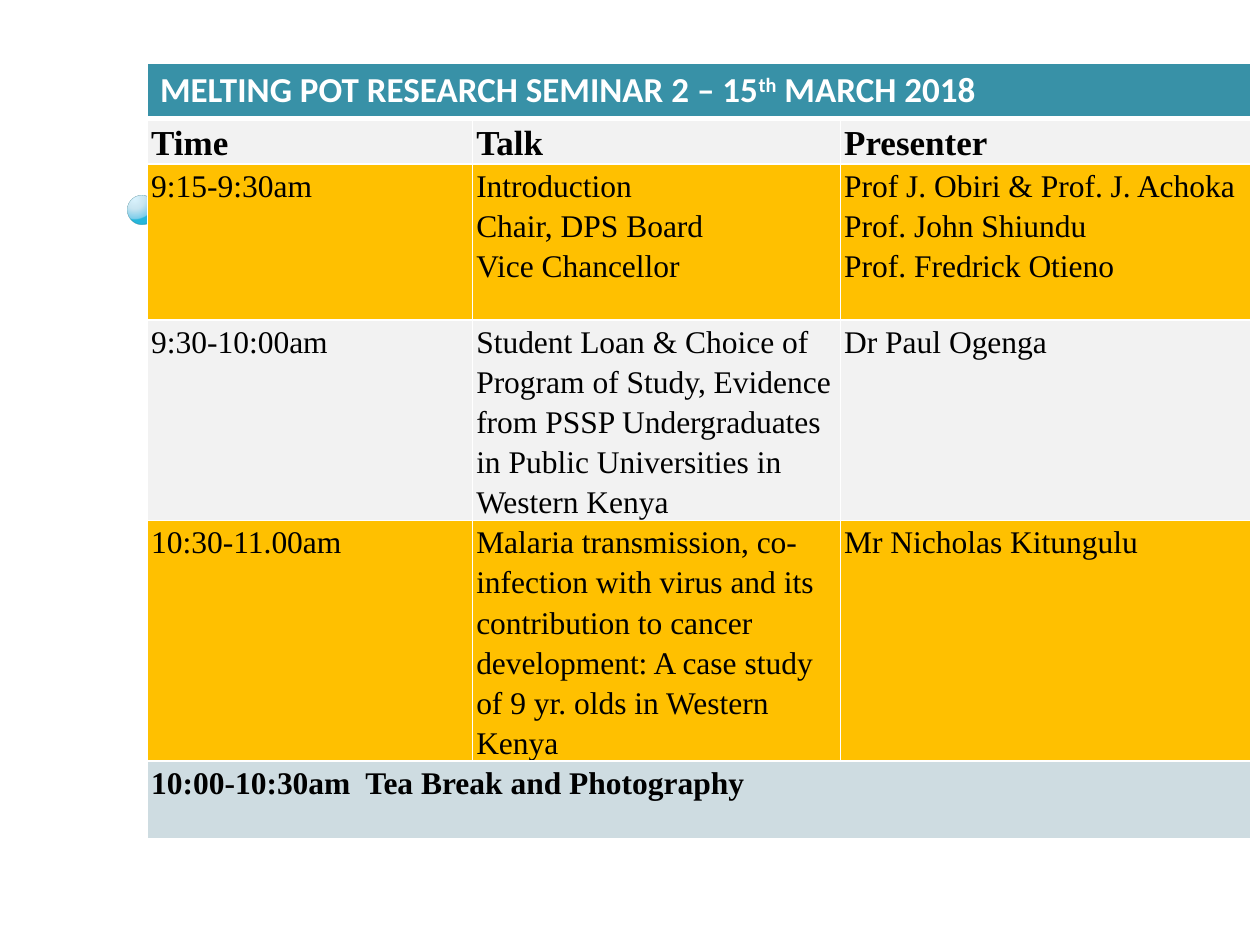
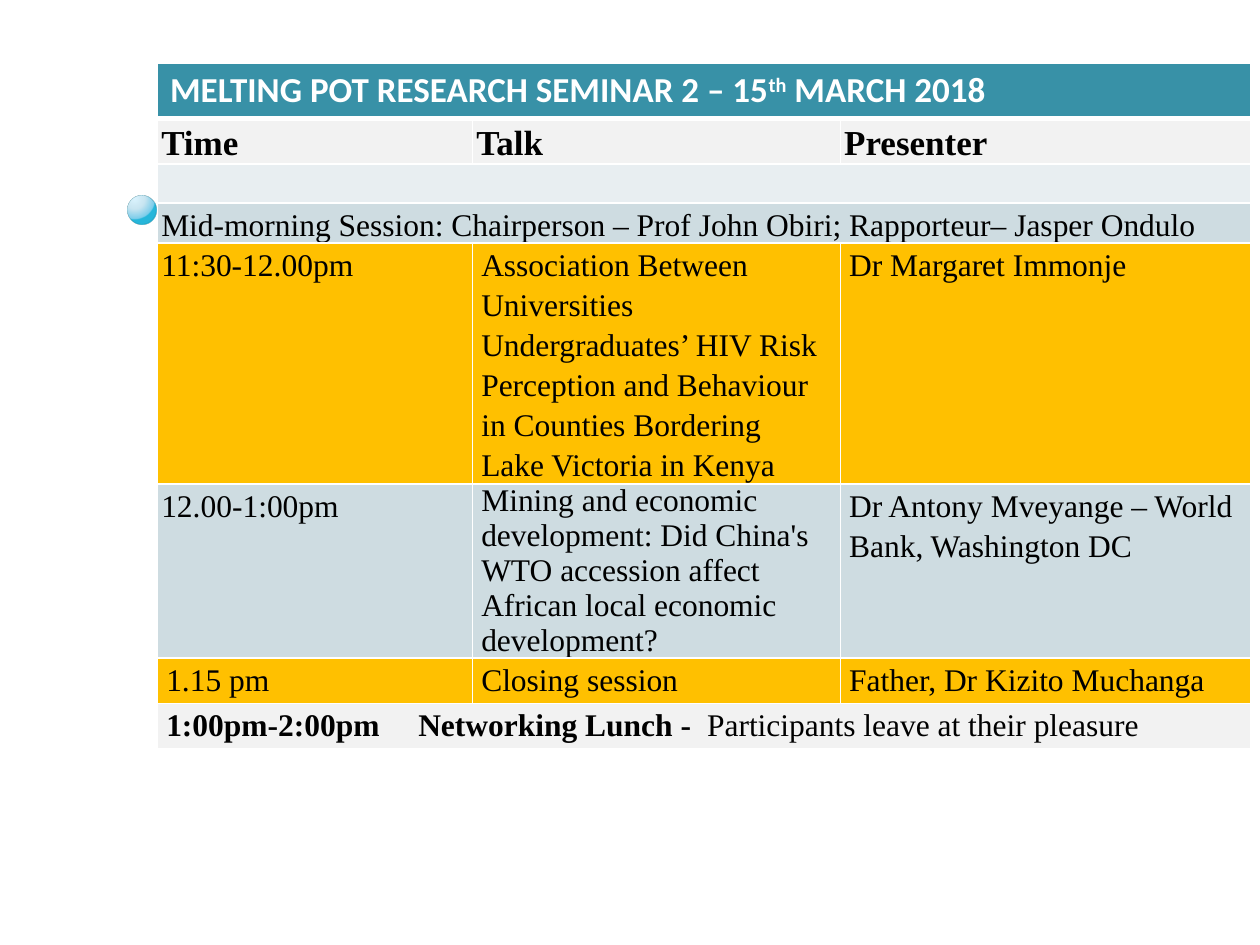
from dataclasses import dataclass

from lxml import etree
from pptx import Presentation
from pptx.dml.color import RGBColor
from pptx.enum.shapes import MSO_SHAPE
from pptx.enum.text import MSO_ANCHOR, PP_ALIGN
from pptx.oxml import parse_xml
from pptx.oxml.ns import nsdecls, qn
from pptx.util import Inches, Pt

OVAL = MSO_SHAPE.OVAL
TOP = MSO_ANCHOR.TOP
LEFT = PP_ALIGN.LEFT


@dataclass(frozen=True)
class Theme:
    teal: str = "3891A7"
    pale: str = "F2F2F2"
    amber: str = "FFC000"
    mist: str = "CEDCE1"
    haze: str = "E8EEF1"
    white: str = "FFFFFF"
    black: str = "000000"
    bead_line: str = "308EA5"
    bead_stops: tuple = ((0, "DAF4FF", 95), (50, "C3E3F0", 90),
                         (95, "6BC7E8", 88), (100, "00ABD5", 85))
    title_font: str = "Calibri"
    body_font: str = "Times New Roman"
    head_size: int = 20
    body_size: int = 18
    spacing: float = 1.15
    tight: float = 0.03
    loose: float = 0.07


THEME = Theme()


@dataclass(frozen=True)
class Box:
    left: float
    top: float
    width: float
    height: float = 0

    def inches(self):
        return [Inches(v) for v in (self.left, self.top, self.width, self.height)]


@dataclass(frozen=True)
class Entry:
    """Text of one cell; a tail is a lighter ending, a tab is a stop in inches."""
    text: str
    inset: float = THEME.tight
    size: int = THEME.body_size
    bold: bool = False
    spacing: float = THEME.spacing
    tail: str = ""
    tab: float = 0


@dataclass(frozen=True)
class Row:
    """One table row; a single entry spans all columns."""
    height: float
    fill: str
    entries: tuple


SLIDE = Box(0, 0, 10, 7.5)
TABLE_TOP, TABLE_RIGHT = 0.5, 9.93
TALK_WIDTH, PRESENTER_WIDTH = 2.92, 3.26
BEAD = Box(1.01, 1.55, 0.23, 0.23)
TITLE_PARTS = (("MELTING POT RESEARCH SEMINAR 2 – 15", False),
               ("th", True), (" MARCH 2018", False))
TITLE_HEIGHT = 0.43
HEADER = Row(0.36, THEME.pale, tuple(
    Entry(name, size=THEME.head_size, bold=True)
    for name in ("Time", "Talk", "Presenter")))

MORNING = (
    Row(1.24, THEME.amber, (
        Entry("9:15-9:30am"),
        Entry("Introduction\nChair, DPS Board\nVice Chancellor"),
        Entry("Prof J. Obiri & Prof. J. Achoka\nProf. John Shiundu\n"
              "Prof. Fredrick Otieno"))),
    Row(1.59, THEME.pale, (
        Entry("9:30-10:00am"),
        Entry("Student Loan & Choice of Program of Study, Evidence from PSSP "
              "Undergraduates in Public Universities in Western Kenya"),
        Entry("Dr Paul Ogenga"))),
    Row(1.91, THEME.amber, (
        Entry("10:30-11.00am"),
        Entry("Malaria transmission, co-infection with virus and its "
              "contribution to cancer development: A case study of 9 yr. olds "
              "in Western Kenya"),
        Entry("Mr Nicholas Kitungulu"))),
    Row(0.62, THEME.mist, (
        Entry("10:00-10:30am\tTea Break and Photography", bold=True, tab=1.7),)),
)

MIDDAY = (
    Row(0.31, THEME.haze, (Entry(""),)),
    Row(0.32, THEME.mist, (
        Entry("Mid-morning Session: Chairperson – Prof John Obiri; "
              "Rapporteur– Jasper Ondulo"),)),
    Row(1.91, THEME.amber, (
        Entry("11:30-12.00pm"),
        Entry("Association Between Universities Undergraduates’ HIV Risk "
              "Perception and Behaviour in Counties Bordering Lake Victoria "
              "in Kenya", THEME.loose),
        Entry("Dr Margaret Immonje", THEME.loose))),
    Row(1.38, THEME.mist, (
        Entry("12.00-1:00pm"),
        Entry("Mining and economic development: Did China's WTO accession "
              "affect African local economic development?", THEME.loose,
              spacing=1.0),
        Entry("Dr Antony Mveyange – World Bank, Washington DC", THEME.loose))),
    Row(0.36, THEME.amber, tuple(
        Entry(text, THEME.loose) for text in
        ("1.15 pm", "Closing session", "Father, Dr Kizito Muchanga"))),
    Row(0.36, THEME.pale, (
        Entry("1:00pm-2:00pm\tNetworking Lunch - ", THEME.loose, bold=True,
              tail=" Participants leave at their pleasure", tab=2.0),)),
)


def style(span, font_name, size, colour, bold):
    font = span.font
    font.name, font.size, font.bold = font_name, Pt(size), bold
    font.color.rgb = RGBColor.from_string(colour)


def add_bead(page, box):
    """Glossy bead at the left margin."""
    bead = page.shapes.add_shape(OVAL, *box.inches())
    bead.shadow.inherit = False
    bead.line.color.rgb = RGBColor.from_string(THEME.bead_line)
    bead.line.width = Pt(0.16)
    stops = "".join(
        f'<a:gs pos="{place * 1000}"><a:srgbClr val="{colour}">'
        f'<a:alpha val="{alpha * 1000}"/></a:srgbClr></a:gs>'
        for place, colour, alpha in THEME.bead_stops)
    gradient = parse_xml(
        f'<a:gradFill {nsdecls("a")}><a:gsLst>{stops}</a:gsLst>'
        '<a:path path="circle"><a:fillToRect l="25000" t="12000" r="75000" '
        'b="88000"/></a:path></a:gradFill>')
    properties = bead._element.spPr
    properties.find(qn("a:prstGeom")).addnext(gradient)
    line_colour = properties.find(qn("a:ln")).find(".//" + qn("a:srgbClr"))
    etree.SubElement(line_colour, qn("a:alpha")).set("val", "60000")


def paint_cell(cell, colour, top=1, bottom=1):
    """White borders, then the fill, in the order the schema asks for."""
    properties = cell._tc.get_or_add_tcPr()
    for side, width in (("L", 1), ("R", 1), ("T", top), ("B", bottom)):
        properties.append(parse_xml(
            f'<a:ln{side} {nsdecls("a")} w="{Pt(width)}"><a:solidFill>'
            f'<a:srgbClr val="{THEME.white}"/></a:solidFill></a:ln{side}>'))
    cell.fill.solid()
    cell.fill.fore_color.rgb = RGBColor.from_string(colour)


def fill_title(cell):
    para = cell.text_frame.paragraphs[0]
    for text, raised in TITLE_PARTS:
        span = para.add_run()
        span.text = text
        style(span, THEME.title_font, THEME.head_size, THEME.white, True)
        if raised:
            span._r.get_or_add_rPr().set("baseline", "30000")


def fill_entry(cell, entry):
    cell.margin_left = cell.margin_right = Inches(entry.inset)
    cell.margin_top = cell.margin_bottom = 0
    cell.vertical_anchor = TOP
    if not entry.text:
        return
    frame = cell.text_frame
    frame.text = entry.text
    for para in frame.paragraphs:
        para.alignment = LEFT
        para.line_spacing = entry.spacing
        if entry.tab:
            stops = etree.SubElement(para._p.get_or_add_pPr(), qn("a:tabLst"))
            stop = etree.SubElement(stops, qn("a:tab"))
            stop.set("pos", str(Inches(entry.tab)))
            stop.set("algn", "l")
        for span in para.runs:
            style(span, THEME.body_font, entry.size, THEME.black, entry.bold)
    if entry.tail:
        span = frame.paragraphs[-1].add_run()
        span.text = entry.tail
        style(span, THEME.body_font, entry.size, THEME.black, False)


def add_programme(page, box, rows):
    """Programme table: title band, column heads, then the sessions."""
    body = (HEADER, *rows)
    widths = (box.width - TALK_WIDTH - PRESENTER_WIDTH, TALK_WIDTH, PRESENTER_WIDTH)
    table = page.shapes.add_table(len(body) + 1, len(widths), *box.inches()).table
    table.horz_banding = False
    for column, width in zip(table.columns, widths):
        column.width = Inches(width)
    heights = (TITLE_HEIGHT, *(row.height for row in body))
    for line, height in zip(table.rows, heights):
        line.height = Inches(height)

    # Title band
    for cell in table.rows[0].cells:
        paint_cell(cell, THEME.teal, bottom=3)
    table.cell(0, 0).merge(table.cell(0, len(widths) - 1))
    fill_title(table.cell(0, 0))

    # Column heads and sessions
    for index, row in enumerate(body, start=1):
        for cell in table.rows[index].cells:
            paint_cell(cell, row.fill, top=3 if index == 1 else 1)
            cell.margin_top = cell.margin_bottom = 0
        if len(row.entries) == 1:
            table.cell(index, 0).merge(table.cell(index, len(widths) - 1))
        for column, entry in enumerate(row.entries):
            fill_entry(table.cell(index, column), entry)


def add_programme_page(deck, left, rows):
    page = deck.slides.add_slide(deck.slide_layouts[6])
    add_bead(page, BEAD)
    height = TITLE_HEIGHT + HEADER.height + sum(row.height for row in rows)
    add_programme(page, Box(left, TABLE_TOP, TABLE_RIGHT - left, height), rows)


def main():
    deck = Presentation()
    deck.slide_width, deck.slide_height = Inches(SLIDE.width), Inches(SLIDE.height)
    for left, rows in ((1.17, MORNING), (1.25, MIDDAY)):
        add_programme_page(deck, left, rows)
    deck.save("out.pptx")


if __name__ == "__main__":
    main()
